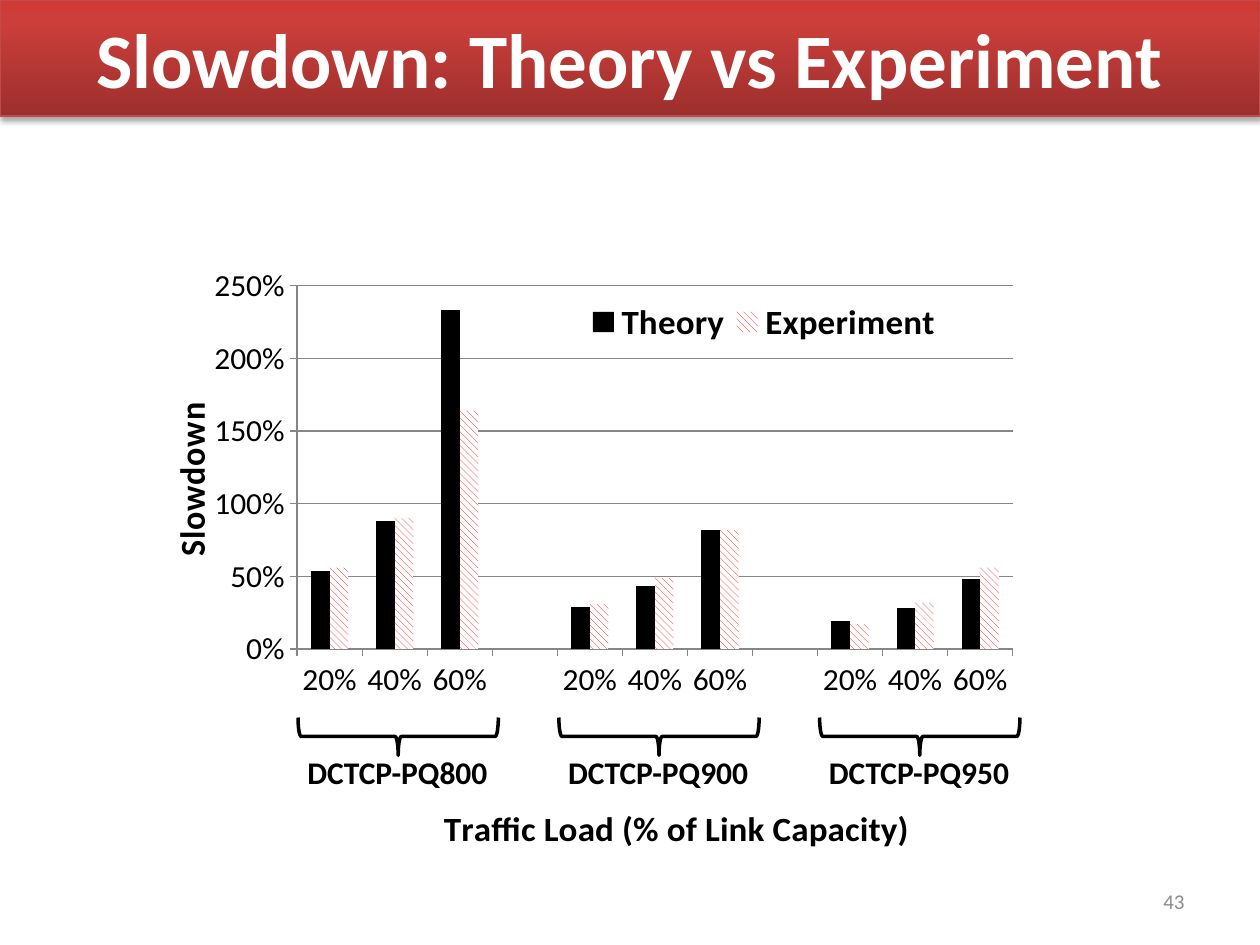
from lxml import etree
from pptx import Presentation
from pptx.chart.data import CategoryChartData
from pptx.dml.color import RGBColor
from pptx.enum.chart import XL_CHART_TYPE as ChartType, XL_LEGEND_POSITION as LegendPos, XL_TICK_MARK as Tick
from pptx.enum.dml import MSO_PATTERN as Pattern
from pptx.enum.shapes import MSO_SHAPE as Shape
from pptx.enum.text import MSO_ANCHOR as Anchor, PP_ALIGN as Align
from pptx.oxml import parse_xml
from pptx.oxml.ns import nsdecls, qn
from pptx.util import Inches, Pt

FONT = "Calibri"
THEORY = [0.54, 0.88, 2.33, None, 0.29, 0.43, 0.82, None, 0.19, 0.28, 0.48]
EXPERIMENT = [0.56, 0.9, 1.64, None, 0.31, 0.49, 0.82, None, 0.17, 0.32, 0.56]
LOADS = ["20%", "40%", "60%"]
GROUPS = ["DCTCP-PQ800", "DCTCP-PQ900", "DCTCP-PQ950"]


def rgb(value):
    return RGBColor.from_string(value)


def set_font(font, size, color="000000", bold=False):
    font.name = FONT
    font.size = Pt(size)
    font.bold = bold
    font.color.rgb = rgb(color)


def add_text(slide, text, box, size, color="000000", bold=False,
             align=Align.LEFT, anchor=Anchor.TOP):
    tb = slide.shapes.add_textbox(*map(Inches, box))
    tf = tb.text_frame
    tf.word_wrap = True
    tf.vertical_anchor = anchor
    p = tf.paragraphs[0]
    p.text = text
    p.alignment = align
    set_font(p.font, size, color, bold)


def add_banner(slide):
    sp = slide.shapes.add_shape(Shape.RECTANGLE, 0, 0, Inches(10), Inches(0.92))
    sp.fill.gradient()
    sp.fill.gradient_angle = 90
    props = sp._element.spPr
    stops = props.find(".//" + qn("a:gsLst"))
    stops.append(parse_xml(f'<a:gs {nsdecls("a")} pos="100000"><a:srgbClr val="CE3B37"/></a:gs>'))
    colors = [(0, "9C2F2D"), (0.8, "CB3E3A"), (1, "CE3B37")]
    for stop, (position, color) in zip(sp.fill.gradient_stops, colors):
        stop.position = position
        stop.color.rgb = rgb(color)
    sp.line.color.rgb = rgb("BF4C48")
    sp.line.width = Pt(0.75)
    sp.shadow.inherit = False
    props.find(qn("a:effectLst")).append(parse_xml(
        f'<a:outerShdw {nsdecls("a")} blurRad="{Pt(3.1)}" dist="{Pt(1.8)}" dir="5400000" '
        'rotWithShape="0"><a:srgbClr val="000000"><a:alpha val="35000"/></a:srgbClr></a:outerShdw>'))


def place(element, index, **values):
    for old in element.findall(qn("c:layout")):
        element.remove(old)
    layout = parse_xml(f'<c:layout {nsdecls("c")}><c:manualLayout/></c:layout>')
    for name, value in values.items():
        etree.SubElement(layout[0], qn(f"c:{name}")).set("val", str(value))
    element.insert(index, layout)


def style_axis(axis, title, x, y):
    axis.has_title = True
    tf = axis.axis_title.text_frame
    tf.text = title
    set_font(tf.paragraphs[0].font, 20, bold=True)
    place(axis.axis_title._element, 1, xMode="edge", yMode="edge", x=x, y=y)
    axis.major_tick_mark = Tick.OUTSIDE
    axis.minor_tick_mark = Tick.NONE
    set_font(axis.tick_labels.font, 18)
    axis.format.line.color.rgb = rgb("868686")


def add_slowdown_chart(slide):
    data = CategoryChartData(number_format="0%")
    data.categories = LOADS + [""] + LOADS + [""] + LOADS
    data.add_series("Theory", THEORY)
    data.add_series("Experiment", EXPERIMENT)
    box = map(Inches, (1.13, 2.12, 7.1, 4.71))
    chart = slide.shapes.add_chart(ChartType.COLUMN_CLUSTERED, *box, data).chart
    chart.has_title = False
    set_font(chart.font, 16)

    plot = chart.plots[0]
    plot.gap_width = 150
    plot.overlap = 0
    plot.vary_by_categories = False
    theory, experiment = (s.format.fill for s in plot.series)
    theory.solid()
    theory.fore_color.rgb = rgb("000000")
    experiment.patterned()
    experiment.pattern = Pattern.WIDE_DOWNWARD_DIAGONAL
    experiment.fore_color.rgb = rgb("FF0000")
    experiment.back_color.rgb = rgb("FFFFFF")

    style_axis(chart.category_axis, "Traffic Load (% of Link Capacity)", 0.33, 0.92)
    value_axis = chart.value_axis
    style_axis(value_axis, "Slowdown", 0.02, 0.23)
    value_axis.minimum_scale = 0
    value_axis.maximum_scale = 2.5
    value_axis.major_unit = 0.5
    value_axis.tick_labels.number_format = "0%"
    value_axis.tick_labels.number_format_is_linked = False
    value_axis.major_gridlines.format.line.color.rgb = rgb("868686")

    chart.has_legend = True
    legend = chart.legend
    legend.position = LegendPos.CORNER
    legend.include_in_layout = True
    set_font(legend.font, 20, bold=True)
    place(legend._element, 1, xMode="edge", yMode="edge", x=0.49, y=0.05, w=0.41, h=0.09)
    place(chart._chartSpace.chart.plotArea, 0, layoutTarget="inner",
          xMode="edge", yMode="edge", x=0.173, y=0.032, w=0.8, h=0.63)


def add_group_label(slide, text, center):
    width, height = 0.3, 1.59
    box = (center - width / 2, 5.05, width, height)
    sp = slide.shapes.add_shape(Shape.RIGHT_BRACE, *map(Inches, box))
    sp.rotation = 90
    sp.fill.background()
    sp.line.color.rgb = rgb("000000")
    sp.line.width = Pt(2)
    sp.shadow.inherit = False
    add_text(slide, text, (center - 0.82, 5.93, 1.71, 0.42), 18, bold=True)


def main():
    prs = Presentation()
    prs.slide_width, prs.slide_height = Inches(10), Inches(7.5)
    slide = prs.slides.add_slide(prs.slide_layouts[6])
    add_banner(slide)
    add_text(slide, "Slowdown: Theory vs Experiment", (0, 0, 10, 0.92), 44, "FFFFFF",
             bold=True, align=Align.CENTER, anchor=Anchor.MIDDLE)
    add_text(slide, "43", (7.17, 6.95, 2.33, 0.4), 12, "8C8C8C",
             align=Align.RIGHT, anchor=Anchor.MIDDLE)
    add_slowdown_chart(slide)
    for i, group in enumerate(GROUPS):
        add_group_label(slide, group, 3.16 + 2.07 * i)
    prs.save("out.pptx")


if __name__ == "__main__":
    main()
